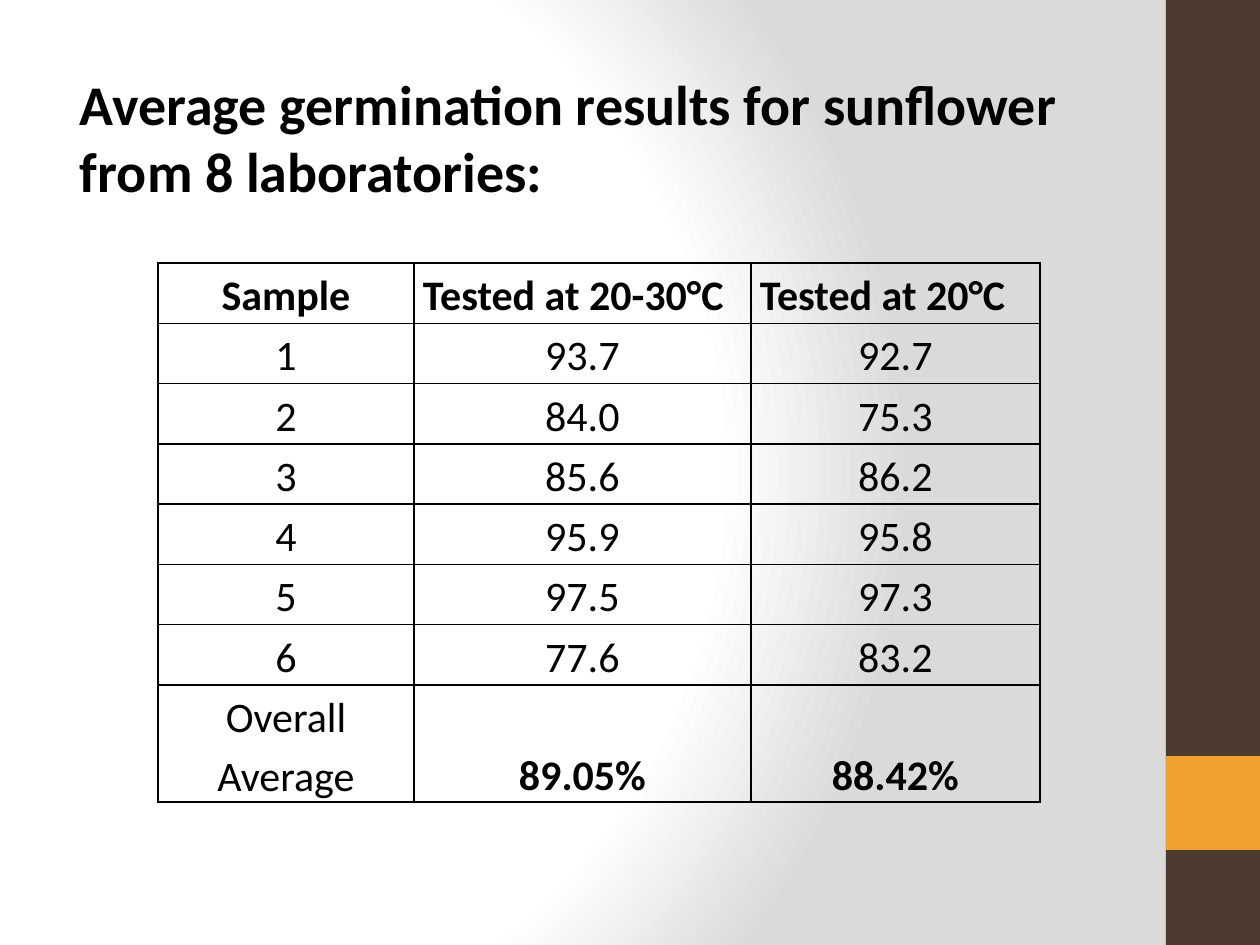
from pptx import Presentation
from pptx.dml.color import RGBColor
from pptx.enum.shapes import MSO_SHAPE
from pptx.enum.text import MSO_ANCHOR, PP_ALIGN
from pptx.oxml import parse_xml
from pptx.util import Emu, Pt

TITLE = "Average germination results for sunflower from 8 laboratories:"
HEADER = ["Sample", "Tested at 20-30°C", "Tested at 20°C"]
SAMPLES = [
    ["1", "93.7", "92.7"],
    ["2", "84.0", "75.3"],
    ["3", "85.6", "86.2"],
    ["4", "95.9", "95.8"],
    ["5", "97.5", "97.3"],
    ["6", "77.6", "83.2"],
]
AVERAGE = ["Overall Average", "89.05%", "88.42%"]
# left, top, width, height in px, and fill
SIDEBAR = [
    (1166, 0, 94, 945, "4E3B30"),
    (1166, 756, 94, 94, "F0A22E"),
]
TITLE_BOX = (53, 63, 1071, 199)
TABLE_LEFT, TABLE_TOP = 158, 263
COLUMN_WIDTHS = [256, 337, 289]
UPPER_HEIGHT, AVERAGE_HEIGHT = 422, 117
BLACK = "000000"
NAMESPACE = 'xmlns:a="http://schemas.openxmlformats.org/drawingml/2006/main"'
GRADIENT_STOPS = [(0, "FFFFFF"), (75, "FFFFFF"), (100, "DADADA")]


def px(length):
    return Emu(round(length * 914400 / 126))


def color(value):
    return RGBColor.from_string(value)


def add_span(para, text, size, bold):
    span = para.add_run()
    span.text = text
    span.font.name = "Calibri"
    span.font.size = Pt(size)
    span.font.bold = bold
    span.font.color.rgb = color(BLACK)


def paint_background(page):
    page.background.fill.gradient()
    stops = "".join(
        f'<a:gs pos="{position * 1000}"><a:srgbClr val="{value}"/></a:gs>'
        for position, value in GRADIENT_STOPS
    )
    gradient = parse_xml(
        f'<a:gradFill {NAMESPACE} rotWithShape="1"><a:gsLst>{stops}</a:gsLst>'
        '<a:path path="circle">'
        '<a:fillToRect l="20000" t="50000" r="100000" b="50000"/>'
        "</a:path></a:gradFill>"
    )
    old = page.element.xpath("./p:cSld/p:bg/p:bgPr/a:gradFill")[0]
    old.getparent().replace(old, gradient)


def add_borders(cell):
    properties = cell._tc.get_or_add_tcPr()
    for index, side in enumerate(("lnL", "lnR", "lnT", "lnB")):
        line = parse_xml(
            f'<a:{side} {NAMESPACE} w="{Pt(1)}"><a:solidFill>'
            f'<a:srgbClr val="{BLACK}"/></a:solidFill></a:{side}>'
        )
        properties.insert(index, line)


def fill_cell(cell, text, bold, align, anchor):
    cell.fill.background()
    cell.margin_left = cell.margin_right = px(9)
    cell.margin_top = cell.margin_bottom = 0
    cell.vertical_anchor = anchor
    para = cell.text_frame.paragraphs[0]
    para.alignment = align
    para.line_spacing = 1.15
    add_span(para, text, 24, bold)
    add_borders(cell)


def add_results(page):
    rows = [HEADER, *SAMPLES, AVERAGE]
    last = len(rows) - 1
    table = page.shapes.add_table(
        len(rows), len(HEADER), px(TABLE_LEFT), px(TABLE_TOP),
        px(sum(COLUMN_WIDTHS)), px(UPPER_HEIGHT + AVERAGE_HEIGHT),
    ).table
    table.first_row = table.horz_banding = False
    for column, width in zip(table.columns, COLUMN_WIDTHS):
        column.width = px(width)
    for r, values in enumerate(rows):
        table.rows[r].height = px(AVERAGE_HEIGHT if r == last else UPPER_HEIGHT / last)
        for c, text in enumerate(values):
            bold = r == 0 or (r == last and c > 0)
            align = PP_ALIGN.LEFT if r == 0 and c > 0 else PP_ALIGN.CENTER
            anchor = MSO_ANCHOR.BOTTOM if r == last else MSO_ANCHOR.TOP
            fill_cell(table.cell(r, c), text, bold, align, anchor)


def main():
    deck = Presentation()
    deck.slide_width, deck.slide_height = px(1260), px(945)
    page = deck.slides.add_slide(deck.slide_layouts[6])
    paint_background(page)

    # Sidebar
    for *place, fill in SIDEBAR:
        bar = page.shapes.add_shape(MSO_SHAPE.RECTANGLE, *map(px, place))
        bar.shadow.inherit = False
        bar.fill.solid()
        bar.fill.fore_color.rgb = color(fill)
        bar.line.fill.background()

    # Title
    box = page.shapes.add_textbox(*map(px, TITLE_BOX))
    box.text_frame.word_wrap = True
    box.text_frame.margin_left = px(27)
    add_span(box.text_frame.paragraphs[0], TITLE, 32, True)

    # Results table
    add_results(page)
    deck.save("out.pptx")


if __name__ == "__main__":
    main()
